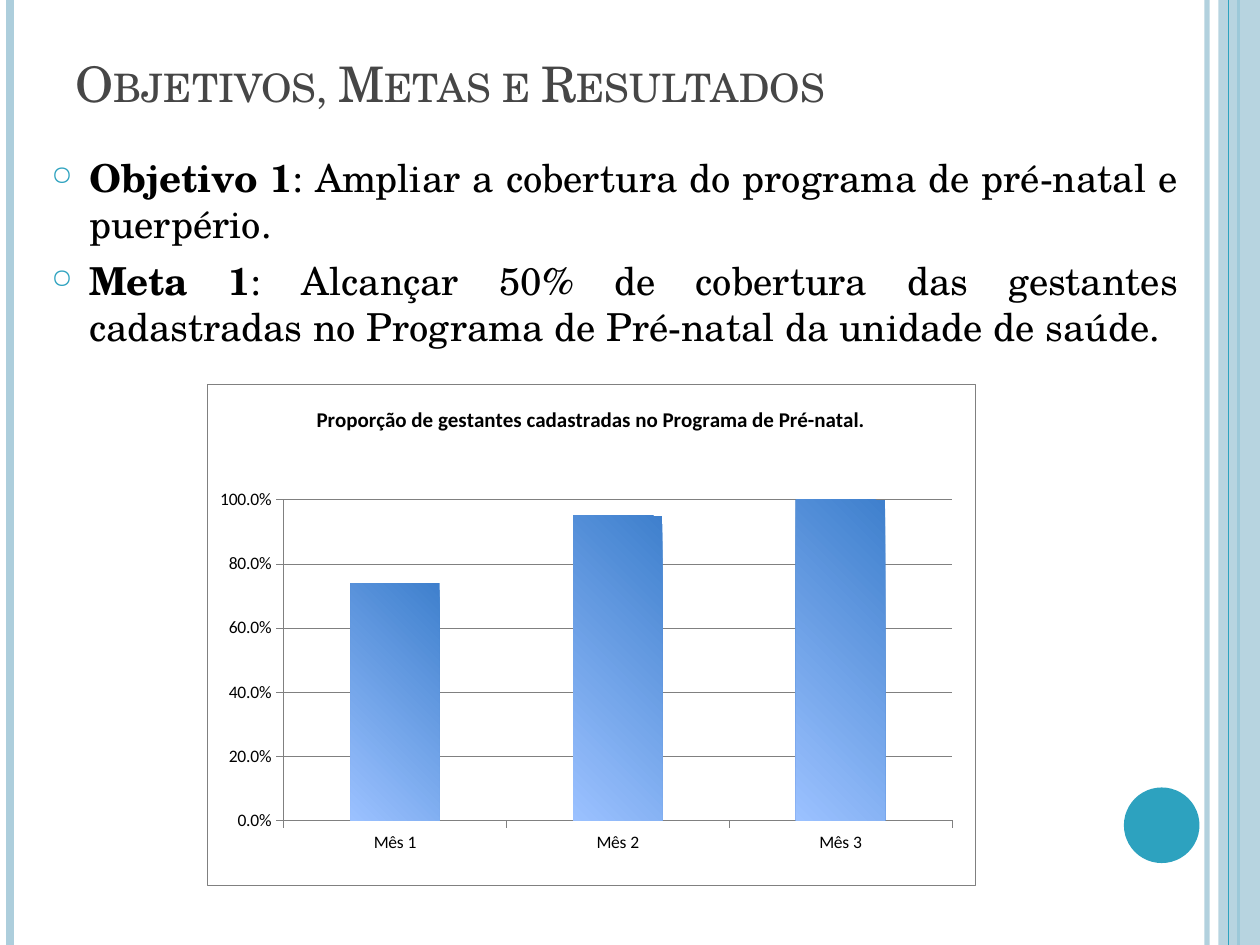
import pptx
import pptx.chart.data
import pptx.dml.color
import pptx.enum.chart
import pptx.enum.shapes
import pptx.enum.text
import pptx.oxml
import pptx.oxml.ns
import pptx.util
from dataclasses import dataclass
from lxml import etree

Inches = pptx.util.Inches
Pt = pptx.util.Pt
qn = pptx.oxml.ns.qn
NS = ('xmlns:a="http://schemas.openxmlformats.org/drawingml/2006/main" '
      'xmlns:c="http://schemas.openxmlformats.org/drawingml/2006/chart"')


@dataclass(frozen=True)
class Theme:
    pale: str = "ADCEDC"
    teal: str = "2DA2BF"
    head: str = "464646"
    ink: str = "000000"
    paper: str = "FFFFFF"
    rule: str = "808080"
    glow: str = "9BC1FF"
    bar: str = "3F80CD"
    serif: str = "TeX Gyre Schola"
    sans: str = "Calibri"
    title: int = 28
    body: int = 22
    label: int = 10
    legend: int = 12


T = Theme()


def rgb(code):
    return pptx.dml.color.RGBColor.from_string(code)


def style(font, size, color, face, bold=False):
    font.size = Pt(size)
    font.color.rgb = rgb(color)
    font.name = face
    font.bold = bold


def write(para, text, size=T.body, color=T.ink, face=T.serif,
          bold=False, small=False):
    run = para.add_run()
    run.text = text
    style(run.font, size, color, face, bold)
    if small:
        run.font._element.set("cap", "small")


def fade(fill, share):
    color = fill._xPr.find(".//" + qn("a:srgbClr"))
    etree.SubElement(color, qn("a:alpha"), val=str(share * 1000))


def stripe(slide, x, color, width, share=100):
    line = slide.shapes.add_connector(
        pptx.enum.shapes.MSO_CONNECTOR.STRAIGHT,
        Inches(x), 0, Inches(x), Inches(7.5))
    line.line.color.rgb = rgb(color)
    line.line.width = Pt(width)
    if share < 100:
        fade(line.line.fill, share)
    etree.SubElement(line._element.spPr, qn("a:effectLst"))


def block(slide, kind, box, color, share=100):
    shape = slide.shapes.add_shape(kind, *map(Inches, box))
    shape.shadow.inherit = False
    shape.fill.solid()
    shape.fill.fore_color.rgb = rgb(color)
    shape.line.fill.background()
    if share < 100:
        fade(shape.fill, share)


def frame(slide):
    kinds = pptx.enum.shapes.MSO_SHAPE
    stripe(slide, 9.58, T.pale, 3, 93)
    stripe(slide, 0.08, T.pale, 4.5)
    stripe(slide, 9.83, T.teal, 1.5)
    block(slide, kinds.RECTANGLE, (9.67, 0, 0.33, 7.5), T.pale, 87)
    stripe(slide, 9.75, T.teal, 0.75)
    block(slide, kinds.OVAL, (8.92, 6.25, 0.6, 0.6), T.teal)


def heading(slide, text):
    shape = slide.shapes.title
    shape.left, shape.top, shape.width, shape.height = map(
        Inches, (0.5, 0.3, 8.17, 0.64))
    shape.text_frame.vertical_anchor = pptx.enum.text.MSO_ANCHOR.BOTTOM
    para = shape.text_frame.paragraphs[0]
    para.alignment = pptx.enum.text.PP_ALIGN.LEFT
    write(para, text, size=T.title, color=T.head, small=True)


def bullet(para):
    props = para._p.get_or_add_pPr()
    props.set("marL", str(Inches(0.3)))
    props.set("indent", str(Inches(-0.3)))
    color = etree.SubElement(props, qn("a:buClr"))
    etree.SubElement(color, qn("a:srgbClr"), val=T.teal)
    etree.SubElement(props, qn("a:buSzPct"), val="70000")
    etree.SubElement(props, qn("a:buChar"), char="○")


def points(slide, items):
    box = slide.shapes.add_textbox(*map(Inches, (0.31, 1.17, 9.14, 5.91)))
    text = box.text_frame
    text.word_wrap = True
    for i, (lead, rest) in enumerate(items):
        para = text.add_paragraph() if i else text.paragraphs[0]
        para.alignment = pptx.enum.text.PP_ALIGN.JUSTIFY
        para.space_before = Pt(6)
        bullet(para)
        write(para, lead, bold=True)
        write(para, rest)


def thin(line):
    line.color.rgb = rgb(T.rule)
    line.width = Pt(0.25)


def panel(border):
    edge = (f'<a:ln w="3175"><a:solidFill><a:srgbClr val="{T.rule}"/>'
            '</a:solidFill></a:ln>' if border else '<a:ln><a:noFill/></a:ln>')
    return pptx.oxml.parse_xml(
        f'<c:spPr {NS}><a:solidFill><a:srgbClr val="{T.paper}"/>'
        f'</a:solidFill>{edge}</c:spPr>')


def place(plot, x, y, w, h):
    for old in plot.findall(qn("c:layout")):
        plot.remove(old)
    layout = etree.Element(qn("c:layout"))
    manual = etree.SubElement(layout, qn("c:manualLayout"))
    parts = dict(layoutTarget="inner", xMode="edge", yMode="edge",
                 x=x, y=y, w=w, h=h)
    for name, value in parts.items():
        etree.SubElement(manual, qn("c:" + name), val=str(value))
    plot.insert(0, layout)


def shade(series):
    # Radial glow from the lower left corner of each column
    series.format.line.fill.background()
    series._element.spPr.insert(0, pptx.oxml.parse_xml(
        f'<a:gradFill {NS} rotWithShape="1"><a:gsLst>'
        f'<a:gs pos="0"><a:srgbClr val="{T.glow}"/></a:gs>'
        f'<a:gs pos="100000"><a:srgbClr val="{T.bar}"/></a:gs></a:gsLst>'
        '<a:path path="circle"><a:fillToRect t="100000" r="100000"/></a:path>'
        '</a:gradFill>'))


def columns(slide, name, cats, vals):
    enum = pptx.enum.chart
    data = pptx.chart.data.CategoryChartData(number_format="0.0%")
    data.categories = cats
    data.add_series(name, vals)
    chart = slide.shapes.add_chart(
        enum.XL_CHART_TYPE.COLUMN_CLUSTERED,
        *map(Inches, (1.64, 3.05, 6.1, 3.98)), data).chart
    style(chart.font, T.label, T.ink, T.sans)
    chart.has_legend = False
    write(chart.chart_title.text_frame.paragraphs[0], name,
          size=T.legend, face=T.sans, bold=True)
    chart.chart_title.include_in_layout = False

    # Axes
    for axis in (chart.category_axis, chart.value_axis):
        style(axis.tick_labels.font, T.label, T.ink, T.sans)
        axis.major_tick_mark = enum.XL_TICK_MARK.OUTSIDE
        thin(axis.format.line)
    axis = chart.value_axis
    axis.minimum_scale, axis.maximum_scale, axis.major_unit = 0, 1, 0.2
    axis.tick_labels.number_format = "0.0%"
    axis.tick_labels.number_format_is_linked = False
    thin(axis.major_gridlines.format.line)

    # Columns and backgrounds
    chart.plots[0].gap_width = 150
    chart.plots[0].vary_by_categories = False
    shade(chart.plots[0].series[0])
    space = chart._chartSpace
    plot = space.find(".//" + qn("c:plotArea"))
    place(plot, 0.1, 0.23, 0.87, 0.64)
    plot.append(panel(False))
    space.find(qn("c:txPr")).addprevious(panel(True))


def main():
    deck = pptx.Presentation()
    deck.slide_width, deck.slide_height = Inches(10), Inches(7.5)
    slide = deck.slides.add_slide(deck.slide_layouts[5])
    frame(slide)
    heading(slide, "Objetivos, Metas e Resultados")
    points(slide, [
        ("Objetivo 1",
         ": Ampliar a cobertura do programa de pré-natal e puerpério."),
        ("Meta 1", ": Alcançar 50% de cobertura das gestantes cadastradas "
                   "no Programa de Pré-natal da unidade de saúde."),
    ])
    columns(slide,
            "Proporção de gestantes cadastradas no Programa de Pré-natal.",
            ["Mês 1", "Mês 2", "Mês 3"], [0.74, 0.95, 1])
    deck.save("out.pptx")


if __name__ == "__main__":
    main()
